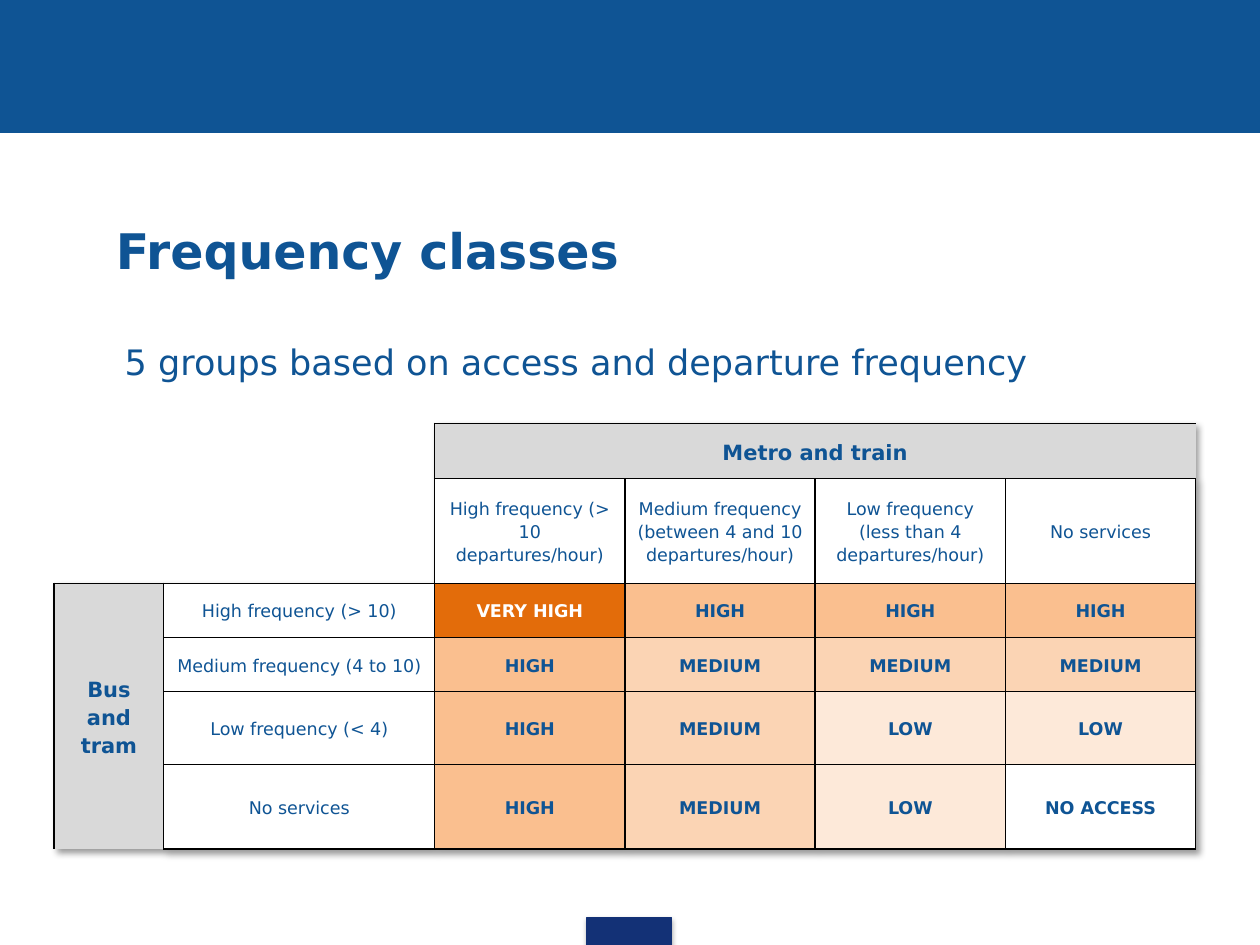
from dataclasses import dataclass

from lxml.etree import SubElement
from pptx import Presentation
from pptx.dml.color import RGBColor
from pptx.enum.shapes import MSO_SHAPE
from pptx.enum.text import MSO_ANCHOR, MSO_AUTO_SIZE, PP_ALIGN
from pptx.oxml import parse_xml
from pptx.oxml.ns import nsdecls, qn
from pptx.util import Inches, Pt

FONT = "DejaVu Sans"
BLUE, NAVY, WHITE, GREY, BLACK = "0F5494", "133176", "FFFFFF", "D9D9D9", "000000"
LEVEL_FILLS = {"VERY HIGH": "E36C0A", "HIGH": "FABF8F", "MEDIUM": "FBD4B4",
               "LOW": "FDE9D9", "NO ACCESS": WHITE}
NO_TABLE_STYLE = "{2D5ABB26-0587-4C30-8999-92F81FD0307C}"

COLUMN_WIDTHS = [0.87, 2.15] + [1.51] * 4
ROW_HEIGHTS = [0.44, 0.83, 0.43, 0.43, 0.58, 0.67]
METRO_CLASSES = ["High frequency (> 10 departures/hour)",
                 "Medium frequency (between 4 and 10 departures/hour)",
                 "Low frequency (less than 4 departures/hour)",
                 "No services"]
BUS_CLASSES = {
    "High frequency (> 10)": ["VERY HIGH", "HIGH", "HIGH", "HIGH"],
    "Medium frequency (4 to 10)": ["HIGH", "MEDIUM", "MEDIUM", "MEDIUM"],
    "Low frequency (< 4)": ["HIGH", "MEDIUM", "LOW", "LOW"],
    "No services": ["HIGH", "MEDIUM", "LOW", "NO ACCESS"],
}


@dataclass
class Bar:
    left: float
    top: float
    width: float
    height: float
    color: str
    shadow: bool = False


BARS = [Bar(0, 0, 10, 1.05, BLUE), Bar(4.66, 7.28, 0.67, 0.22, NAVY, shadow=True)]


def rgb(color: str) -> RGBColor:
    return RGBColor.from_string(color)


def shadow_effect(opacity: int, blur: float, distance: float, angle: int):
    return parse_xml(
        f'<a:effectLst {nsdecls("a")}><a:outerShdw blurRad="{Pt(blur)}" dist="{Pt(distance)}" '
        f'dir="{angle * 60000}" algn="tl" rotWithShape="0"><a:srgbClr val="{BLACK}">'
        f'<a:alpha val="{opacity * 1000}"/></a:srgbClr></a:outerShdw></a:effectLst>')


def write(frame, text: str, *, size: float, color: str = BLUE, bold: bool = False,
          align=PP_ALIGN.LEFT, anchor=MSO_ANCHOR.TOP, indent: float = 0,
          line_spacing: float = 1.0, after: float = 0) -> None:
    frame.word_wrap = True
    frame.vertical_anchor = anchor
    para = frame.paragraphs[0]
    para.text = text
    para.alignment = align
    para.line_spacing = line_spacing
    para.space_before, para.space_after = Pt(0), Pt(after)
    if indent:
        properties = para._p.get_or_add_pPr()
        properties.set("marL", str(Inches(indent)))
        properties.set("indent", "0")
        SubElement(properties, qn("a:buNone"))
    font = para.runs[0].font
    font.name, font.size, font.bold = FONT, Pt(size), bold
    font.color.rgb = rgb(color)


def place(shape, left: float, top: float, width: float, height: float) -> None:
    shape.left, shape.top = Inches(left), Inches(top)
    shape.width, shape.height = Inches(width), Inches(height)
    shape.text_frame.auto_size = MSO_AUTO_SIZE.NONE


def draw_bar(page, bar: Bar) -> None:
    shape = page.shapes.add_shape(MSO_SHAPE.RECTANGLE, Inches(bar.left), Inches(bar.top),
                                  Inches(bar.width), Inches(bar.height))
    shape.fill.solid()
    shape.fill.fore_color.rgb = rgb(bar.color)
    shape.line.color.rgb = rgb(bar.color)
    shape.line.width = Pt(0.75)
    if bar.shadow:
        shape._element.spPr.append(shadow_effect(35, 3.1, 1.8, 90))
    else:
        shape.shadow.inherit = False


def set_borders(cell, sides: str) -> None:
    properties = cell._tc.get_or_add_tcPr()
    for position, side in enumerate(side for side in "LRTB" if side in sides):
        properties.insert(position, parse_xml(
            f'<a:ln{side} {nsdecls("a")} w="{Pt(1)}"><a:solidFill>'
            f'<a:srgbClr val="{BLACK}"/></a:solidFill></a:ln{side}>'))


def fill_cell(cell, text: str, fill: str, *, size: float = 10, color: str = BLUE,
              bold: bool = False) -> None:
    cell.margin_left = cell.margin_right = Inches(0.07)
    cell.margin_top = cell.margin_bottom = 0
    cell.vertical_anchor = MSO_ANCHOR.MIDDLE
    cell.fill.solid()
    cell.fill.fore_color.rgb = rgb(fill)
    write(cell.text_frame, text, size=size, color=color, bold=bold,
          align=PP_ALIGN.CENTER, anchor=MSO_ANCHOR.MIDDLE, line_spacing=1.15, after=10)


def cell_borders(row: int, column: int) -> str:
    if row < 2 and column < 2:  # empty corner
        return ("R" if column == 1 else "") + ("B" if row == 1 else "")
    if row == 0:  # merged heading across
        return "TB" + {2: "L", 5: "R"}.get(column, "")
    if column == 0:  # merged heading down
        return "LR" + {2: "T", 5: "B"}.get(row, "")
    return "LRTB"


def draw_table(page) -> None:
    frame = page.shapes.add_table(len(ROW_HEIGHTS), len(COLUMN_WIDTHS), Inches(0.43),
                                  Inches(3.36), Inches(sum(COLUMN_WIDTHS)),
                                  Inches(sum(ROW_HEIGHTS)))
    table = frame.table
    table.first_row = table.horz_banding = False
    properties = table._tbl.tblPr
    properties.find(qn("a:tableStyleId")).text = NO_TABLE_STYLE
    properties.insert(0, shadow_effect(40, 4, 3, 45))
    for column, width in zip(table.columns, COLUMN_WIDTHS):
        column.width = Inches(width)
    for row, height in zip(table.rows, ROW_HEIGHTS):
        row.height = Inches(height)

    # Headings
    table.cell(0, 2).merge(table.cell(0, 5))
    table.cell(2, 0).merge(table.cell(5, 0))
    fill_cell(table.cell(0, 2), "Metro and train", GREY, size=12, bold=True)
    fill_cell(table.cell(2, 0), "Bus and tram", GREY, size=12, bold=True)
    for column, label in enumerate(METRO_CLASSES, start=2):
        fill_cell(table.cell(1, column), label, WHITE)

    # Access levels
    for row, (label, levels) in enumerate(BUS_CLASSES.items(), start=2):
        fill_cell(table.cell(row, 1), label, WHITE)
        for column, level in enumerate(levels, start=2):
            fill_cell(table.cell(row, column), level, LEVEL_FILLS[level], bold=True,
                      color=WHITE if level == "VERY HIGH" else BLUE)

    for row in range(len(ROW_HEIGHTS)):
        for column in range(len(COLUMN_WIDTHS)):
            set_borders(table.cell(row, column), cell_borders(row, column))


def main() -> None:
    deck = Presentation()
    deck.slide_width, deck.slide_height = Inches(10), Inches(7.5)
    page = deck.slides.add_slide(deck.slide_layouts[1])

    # Header and footer bars
    for bar in BARS:
        draw_bar(page, bar)

    # Title and body
    title, body = page.shapes.title, page.placeholders[1]
    place(title, 0.43, 1.47, 9, 1.02)
    write(title.text_frame, "Frequency classes", size=28, bold=True,
          anchor=MSO_ANCHOR.MIDDLE, indent=0.39)
    place(body, 0.51, 2.65, 9, 4.17)
    write(body.text_frame, "5 groups based on access and departure frequency",
          size=20, indent=0.38, after=6)

    draw_table(page)
    deck.save("out.pptx")


if __name__ == "__main__":
    main()
